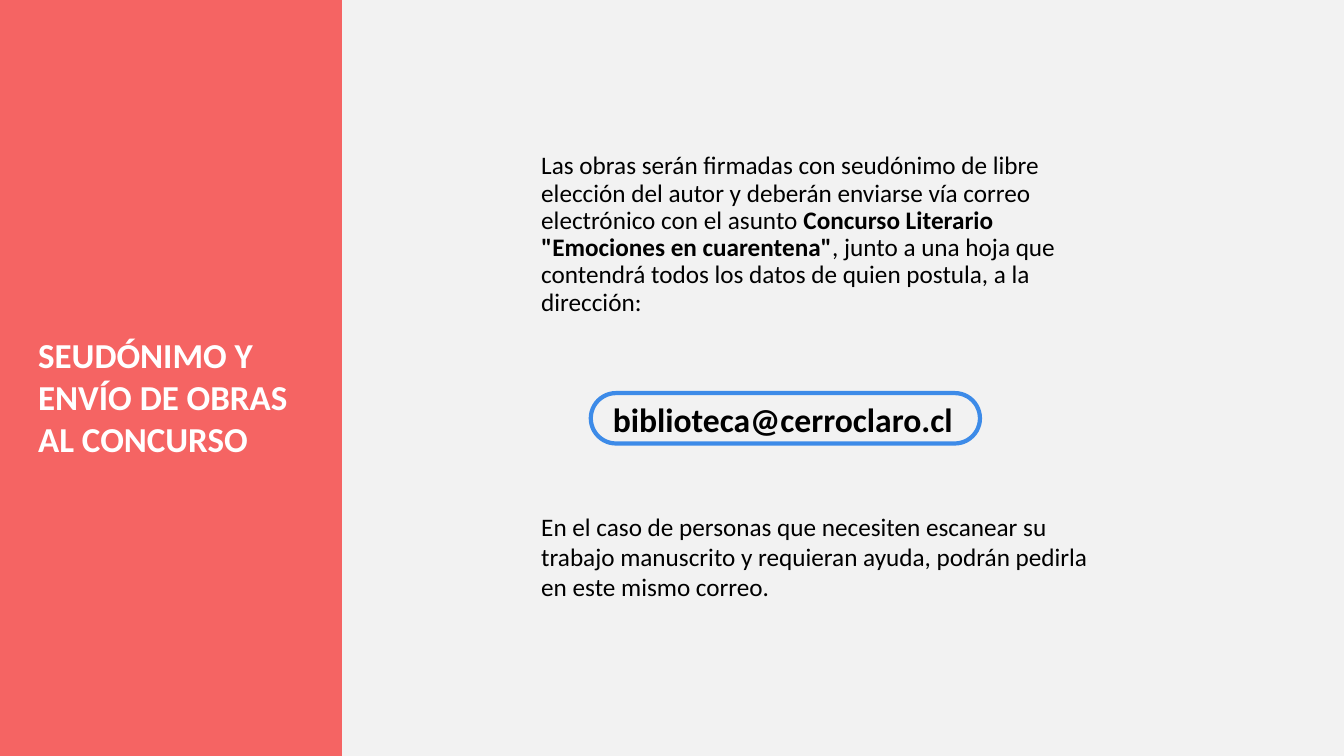
from dataclasses import dataclass

from pptx import Presentation
from pptx.dml.color import RGBColor
from pptx.enum.shapes import MSO_SHAPE
from pptx.util import Inches, Pt


@dataclass(frozen=True)
class Theme:
    font: str = "Calibri"
    background: RGBColor = RGBColor(0xF2, 0xF2, 0xF2)
    coral: RGBColor = RGBColor(0xF5, 0x64, 0x63)
    blue: RGBColor = RGBColor(0x3D, 0x8B, 0xE8)
    black: RGBColor = RGBColor(0, 0, 0)
    white: RGBColor = RGBColor(0xFF, 0xFF, 0xFF)
    title_size: int = 25
    email_size: int = 24
    body_size: int = 18
    outline_width: int = 3


THEME = Theme()


def add_text(slide, box, runs, size, color=THEME.black, line_spacing=None, wrap=True):
    """Add one paragraph; runs are (text, bold) pairs."""
    frame = slide.shapes.add_textbox(*map(Inches, box)).text_frame
    frame.word_wrap = wrap
    paragraph = frame.paragraphs[0]
    if line_spacing:
        paragraph.line_spacing = line_spacing
    for text, bold in runs:
        run = paragraph.add_run()
        run.text = text
        run.font.name = THEME.font
        run.font.size = Pt(size)
        run.font.bold = bold
        run.font.color.rgb = color


def add_title_panel(slide, box):
    left, top, width, height = box
    panel = slide.shapes.add_shape(MSO_SHAPE.RECTANGLE, *map(Inches, box))
    panel.shadow.inherit = False
    panel.fill.solid()
    panel.fill.fore_color.rgb = THEME.coral
    panel.line.fill.background()
    add_text(slide, (left + 0.28, top + 3.26, width - 0.5, 1.65),
             [("SEUDÓNIMO Y ENVÍO DE OBRAS AL CONCURSO", True)],
             THEME.title_size, THEME.white)


def add_email_pill(slide, box):
    left, top, width, height = box
    add_text(slide, (left + 0.12, top + 0.01, width - 0.11, height),
             [("biblioteca@cerroclaro.cl", True)], THEME.email_size, wrap=False)
    pill = slide.shapes.add_shape(MSO_SHAPE.ROUNDED_RECTANGLE, *map(Inches, box))
    pill.adjustments[0] = 0.5
    pill.shadow.inherit = False
    pill.fill.background()
    pill.line.color.rgb = THEME.blue
    pill.line.width = Pt(THEME.outline_width)


def add_instructions(slide, box):
    left, top, width, height = box
    add_text(slide, (left, top, 5.44, 2.34), [
        ("Las obras serán firmadas con seudónimo de libre elección del autor y "
         "deberán enviarse vía correo electrónico con el asunto ", False),
        ('Concurso Literario "Emociones en cuarentena"', True),
        (", junto a una hoja que contendrá todos los datos de quien postula, "
         "a la dirección:", False),
    ], THEME.body_size, line_spacing=0.9)
    add_email_pill(slide, (left + 0.59, top + 2.43, 3.86, 0.5))
    add_text(slide, (left, top + height - 1.01, width, 1.01), [
        ("En el caso de personas que necesiten escanear su trabajo manuscrito y "
         "requieran ayuda, podrán pedirla en este mismo correo.", False),
    ], THEME.body_size)


def main():
    presentation = Presentation()
    presentation.slide_width = Inches(13.33)
    presentation.slide_height = Inches(7.5)
    slide = presentation.slides.add_slide(presentation.slide_layouts[6])
    slide.background.fill.solid()
    slide.background.fill.fore_color.rgb = THEME.background
    add_title_panel(slide, (0, 0, 3.39, 7.5))
    add_instructions(slide, (5.27, 1.47, 5.63, 4.56))
    presentation.save("out.pptx")


if __name__ == "__main__":
    main()
